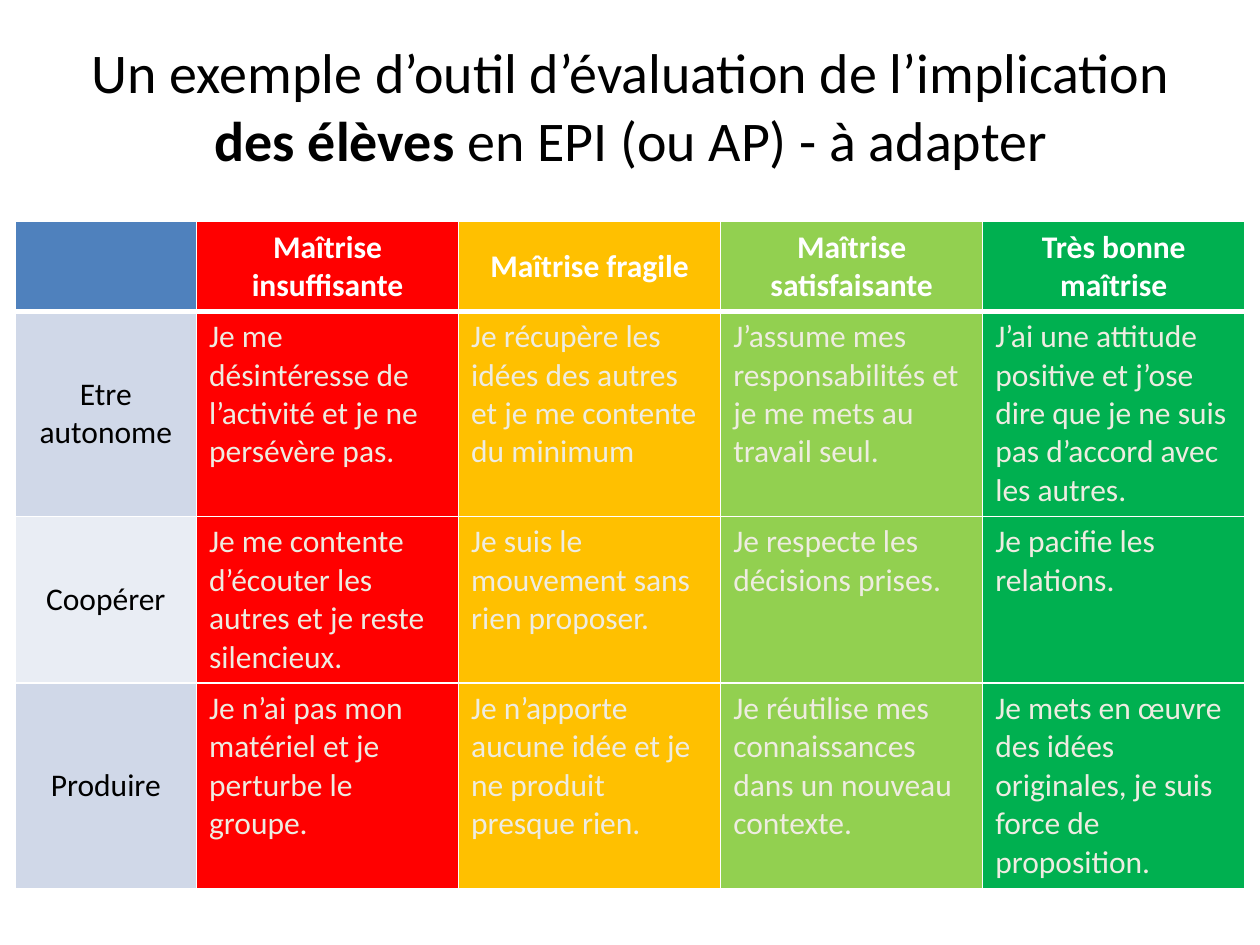
import pptx
import pptx.util
import pptx.dml.color
import pptx.enum.text
import pptx.oxml.ns
import lxml.etree

TITLE = [
    ("Un exemple d’outil d’évaluation de l’implication ", False),
    ("des élèves ", True),
    ("en EPI (ou AP) - à adapter", False),
]
LEVELS = ["", "Maîtrise insuffisante", "Maîtrise fragile",
          "Maîtrise satisfaisante", "Très bonne maîtrise"]
SKILLS = [
    ["Etre autonome",
     "Je me désintéresse de l’activité et je ne persévère pas.",
     "Je récupère les idées des autres et je me contente du minimum",
     "J’assume mes responsabilités et je me mets au travail seul.",
     "J’ai une attitude positive et j’ose dire que je ne suis pas d’accord avec les autres."],
    ["Coopérer",
     "Je me contente d’écouter les autres et je reste silencieux.",
     "Je suis le mouvement sans rien proposer.",
     "Je respecte les décisions prises.",
     "Je pacifie les relations."],
    ["Produire",
     "Je n’ai pas mon matériel et je perturbe le groupe.",
     "Je n’apporte aucune idée et je ne produit presque rien.",
     "Je réutilise mes connaissances dans un nouveau contexte.",
     "Je mets en œuvre des idées originales, je suis force de proposition."],
]
COLUMN_WIDTHS = [1.44] + [2.08] * 4
ROW_HEIGHTS = [0.7, 1.63, 1.32, 1.63]
THEME = {
    "font": "Calibri",
    "title_size": 32,
    "table_size": 18,
    "dark": "000000",
    "header_text": "FFFFFF",
    "body_text": "EEECE1",
    "border": "FFFFFF",
    "corner": "4F81BD",
    "bands": ["D0D8E8", "E9EDF4"],
    "levels": ["FF0000", "FFC000", "92D050", "00B050"],
}
Inches = pptx.util.Inches
ALIGN = pptx.enum.text.PP_ALIGN
ANCHOR = pptx.enum.text.MSO_ANCHOR


def color(value):
    return pptx.dml.color.RGBColor.from_string(value)


def add_span(para, text, size, ink, bold=False):
    span = para.add_run()
    span.text = text
    span.font.name = THEME["font"]
    span.font.size = pptx.util.Pt(size)
    span.font.bold = bold
    span.font.color.rgb = color(ink)


def set_borders(cell, top, bottom):
    properties = cell._tc.get_or_add_tcPr()
    qn = pptx.oxml.ns.qn
    for side, points in (("L", 1), ("R", 1), ("T", top), ("B", bottom)):
        line = lxml.etree.SubElement(properties, qn("a:ln" + side), w=str(pptx.util.Pt(points)))
        fill = lxml.etree.SubElement(line, qn("a:solidFill"))
        lxml.etree.SubElement(fill, qn("a:srgbClr"), val=THEME["border"])


def fill_cell(cell, text, row, column):
    header, label = row == 0, column == 0
    set_borders(cell, 3 if row == 1 else 1, 3 if header else 1)
    if label:
        background = THEME["corner"] if header else THEME["bands"][(row - 1) % 2]
    else:
        background = THEME["levels"][column - 1]
    cell.fill.solid()
    cell.fill.fore_color.rgb = color(background)
    centred = header or label
    cell.vertical_anchor = ANCHOR.MIDDLE if centred else ANCHOR.TOP
    para = cell.text_frame.paragraphs[0]
    para.alignment = ALIGN.CENTER if centred else ALIGN.LEFT
    ink = THEME["header_text"] if header else THEME["dark"] if label else THEME["body_text"]
    if text:
        add_span(para, text, THEME["table_size"], ink, header)


def add_title(page):
    box = page.shapes.title
    box.left, box.top, box.width, box.height = map(Inches, (0.51, 0.21, 9, 1.25))
    box.text_frame.word_wrap = True
    box.text_frame.vertical_anchor = ANCHOR.MIDDLE
    para = box.text_frame.paragraphs[0]
    para.alignment = ALIGN.CENTER
    for text, bold in TITLE:
        add_span(para, text, THEME["title_size"], THEME["dark"], bold)


def add_grid(page):
    rows = [LEVELS] + SKILLS
    table = page.shapes.add_table(
        len(rows), len(LEVELS), Inches(0.12), Inches(1.76),
        Inches(sum(COLUMN_WIDTHS)), Inches(sum(ROW_HEIGHTS))).table
    for column, width in zip(table.columns, COLUMN_WIDTHS):
        column.width = Inches(width)
    for row, height in zip(table.rows, ROW_HEIGHTS):
        row.height = Inches(height)
    for row, texts in enumerate(rows):
        for column, text in enumerate(texts):
            fill_cell(table.cell(row, column), text, row, column)


def main():
    deck = pptx.Presentation()
    deck.slide_width, deck.slide_height = Inches(10), Inches(7.5)
    page = deck.slides.add_slide(deck.slide_layouts[5])
    add_title(page)
    add_grid(page)
    deck.save("out.pptx")


if __name__ == "__main__":
    main()
